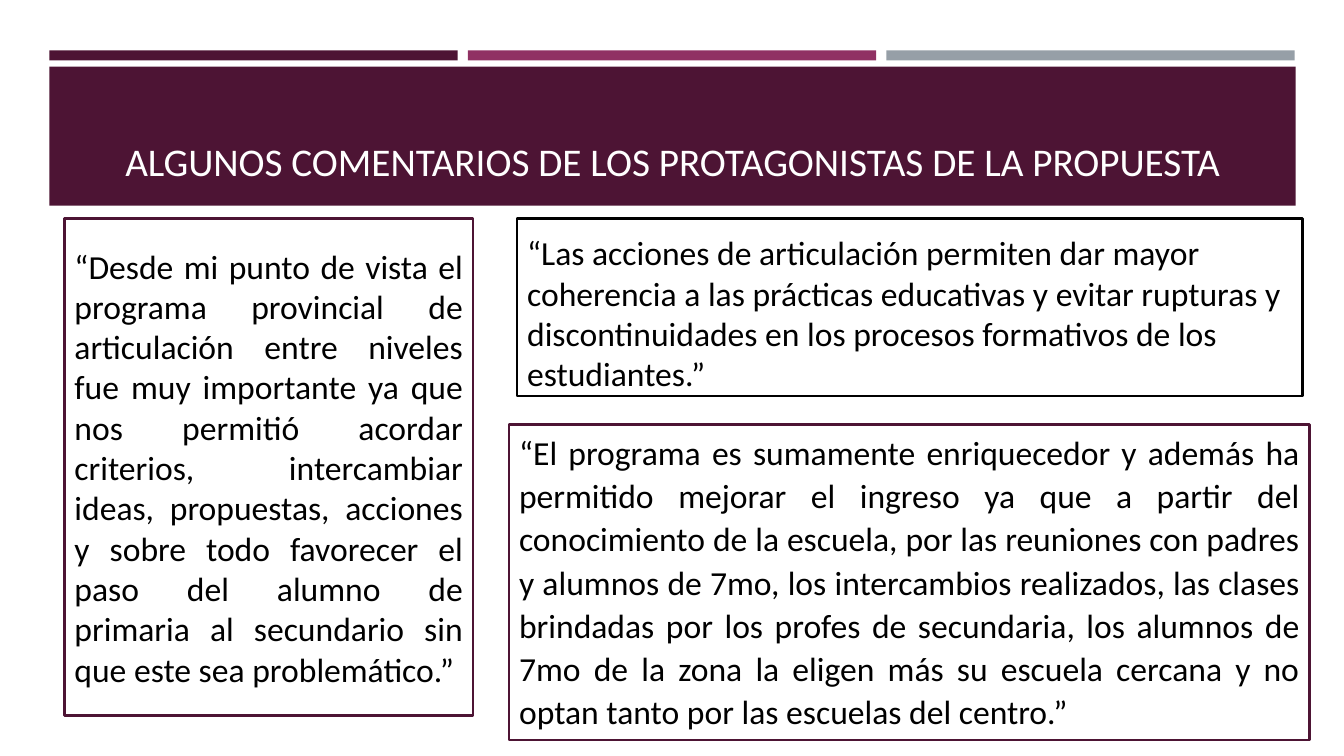
from pptx import Presentation
from pptx import util as u
from pptx.dml.color import RGBColor
from pptx.enum import shapes, text

PX = 9144
PLUM = RGBColor(0x4D, 0x14, 0x34)
MAGENTA = RGBColor(0x90, 0x31, 0x63)
GRAY = RGBColor(0x96, 0x9F, 0xA7)
WHITE = RGBColor(0xFF, 0xFF, 0xFF)
BLACK = RGBColor(0, 0, 0)
LEFT, JUSTIFY, CENTER = text.PP_ALIGN.LEFT, text.PP_ALIGN.JUSTIFY, text.PP_ALIGN.CENTER
TOP, MIDDLE, BOTTOM = text.MSO_ANCHOR.TOP, text.MSO_ANCHOR.MIDDLE, text.MSO_ANCHOR.BOTTOM

TITLE = "ALGUNOS COMENTARIOS DE LOS PROTAGONISTAS DE LA PROPUESTA"
COMMENTS = [
    ((64, 217, 405, 493), PLUM, {"vertical_anchor": MIDDLE},
     {"alignment": JUSTIFY},
     "“Desde mi punto de vista el programa provincial de articulación entre niveles "
     "fue muy importante ya que nos permitió acordar criterios, intercambiar ideas, "
     "propuestas, acciones y sobre todo favorecer el paso del alumno de primaria al "
     "secundario sin que este sea problemático.”"),
    ((513, 217, 779, 176), BLACK, {"vertical_anchor": MIDDLE, "margin_top": 16 * PX},
     {"alignment": LEFT},
     "“Las acciones de articulación permiten dar mayor coherencia a las prácticas "
     "educativas y evitar rupturas y discontinuidades en los procesos formativos de "
     "los estudiantes.”"),
    ((505, 421, 794, 313), PLUM, {"vertical_anchor": TOP},
     {"alignment": JUSTIFY, "line_spacing": 1.07},
     "“El programa es sumamente enriquecedor y además ha permitido mejorar el ingreso "
     "ya que a partir del conocimiento de la escuela, por las reuniones con padres y "
     "alumnos de 7mo, los intercambios realizados, las clases brindadas por los profes "
     "de secundaria, los alumnos de 7mo de la zona la eligen más su escuela cercana y "
     "no optan tanto por las escuelas del centro.”"),
]


def set_all(obj, values):
    for name, value in values.items():
        setattr(obj, name, value)


def write(sp, words, size, color, frame, para):
    tf = sp.text_frame
    set_all(tf, {"word_wrap": True, "auto_size": text.MSO_AUTO_SIZE.NONE,
                 "margin_left": 10 * PX, "margin_right": 10 * PX,
                 "margin_top": 5 * PX, "margin_bottom": 5 * PX, **frame})
    p = tf.paragraphs[0]
    set_all(p, {"space_before": u.Pt(0), "line_spacing": 1.0, **para})
    r = p.add_run()
    r.text = words
    set_all(r.font, {"name": "Calibri", "size": u.Pt(size), "bold": False})
    r.font.color.rgb = color


def add_rect(s, box, fill, line=None):
    sp = s.shapes.add_shape(shapes.MSO_SHAPE.RECTANGLE, *(v * PX for v in box))
    sp.shadow.inherit = False
    sp.fill.solid()
    sp.fill.fore_color.rgb = fill
    if line is None:
        sp.line.fill.background()
    else:
        sp.line.color.rgb = line
        sp.line.width = u.Pt(1.75)
    return sp


def add_header(s, box):
    x, y, w, h = box
    gap = 10
    bar_w = (w - 2 * gap) // 3
    for i, color in enumerate((PLUM, MAGENTA, GRAY)):
        add_rect(s, (x + i * (bar_w + gap), y, bar_w, 10), color)
    add_rect(s, (x, y + 16, w, h - 16), PLUM)
    title = s.shapes.title
    set_all(title, {"left": (x + 15) * PX, "top": (y + 30) * PX,
                    "width": (w - 30) * PX, "height": (h - 46) * PX})
    s.shapes._spTree.append(title._element)
    write(title, TITLE, 28, WHITE, {"vertical_anchor": BOTTOM}, {"alignment": CENTER})


def add_comment(s, box, line, frame, para, words):
    sp = add_rect(s, box, WHITE, line)
    write(sp, words, 24, BLACK, frame, para)


def main():
    prs = Presentation()
    set_all(prs, {"slide_width": 1333 * PX, "slide_height": 750 * PX})
    s = prs.slides.add_slide(prs.slide_layouts[5])
    add_header(s, (49, 50, 1236, 154))
    for comment in COMMENTS:
        add_comment(s, *comment)
    prs.save("out.pptx")


if __name__ == "__main__":
    main()
